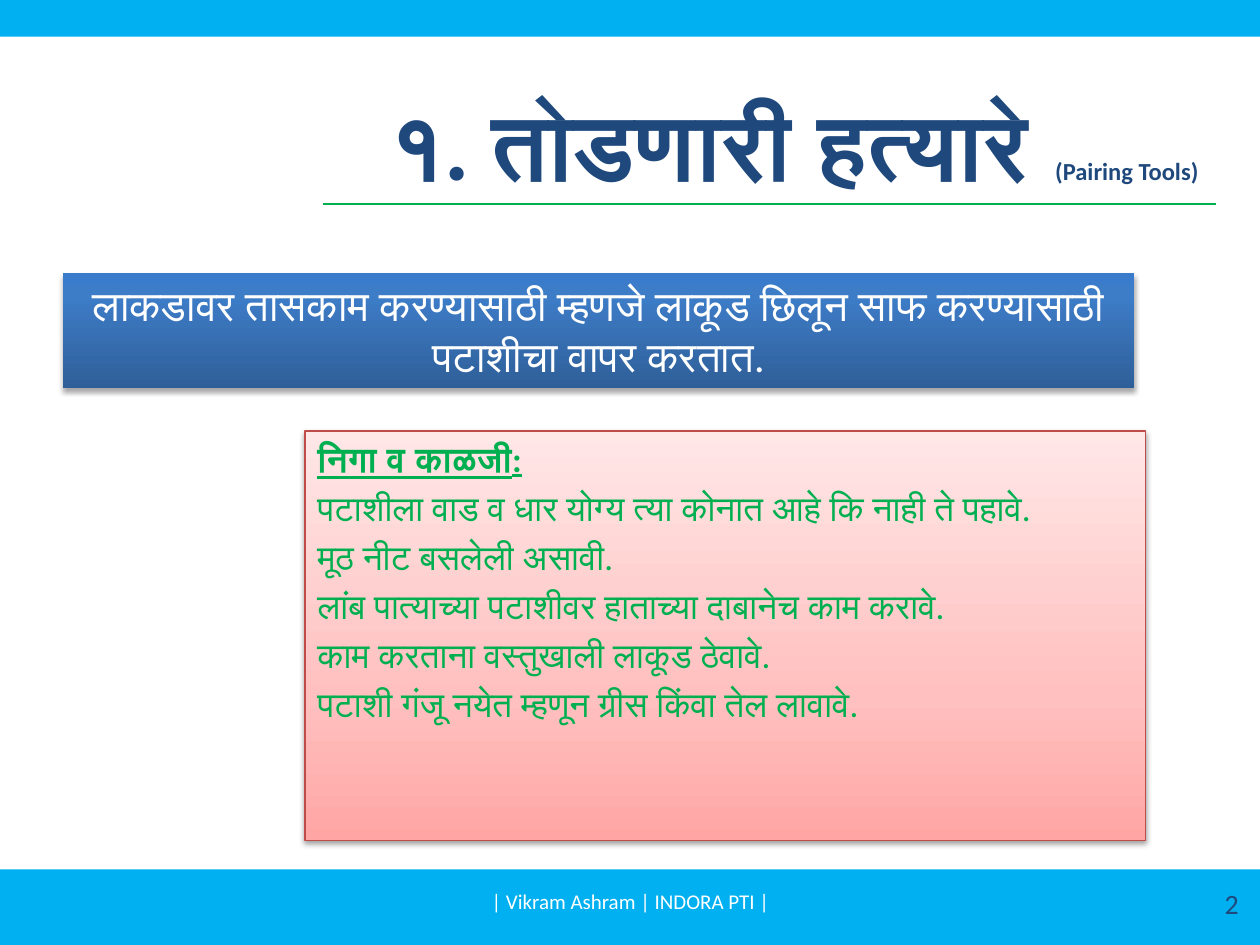
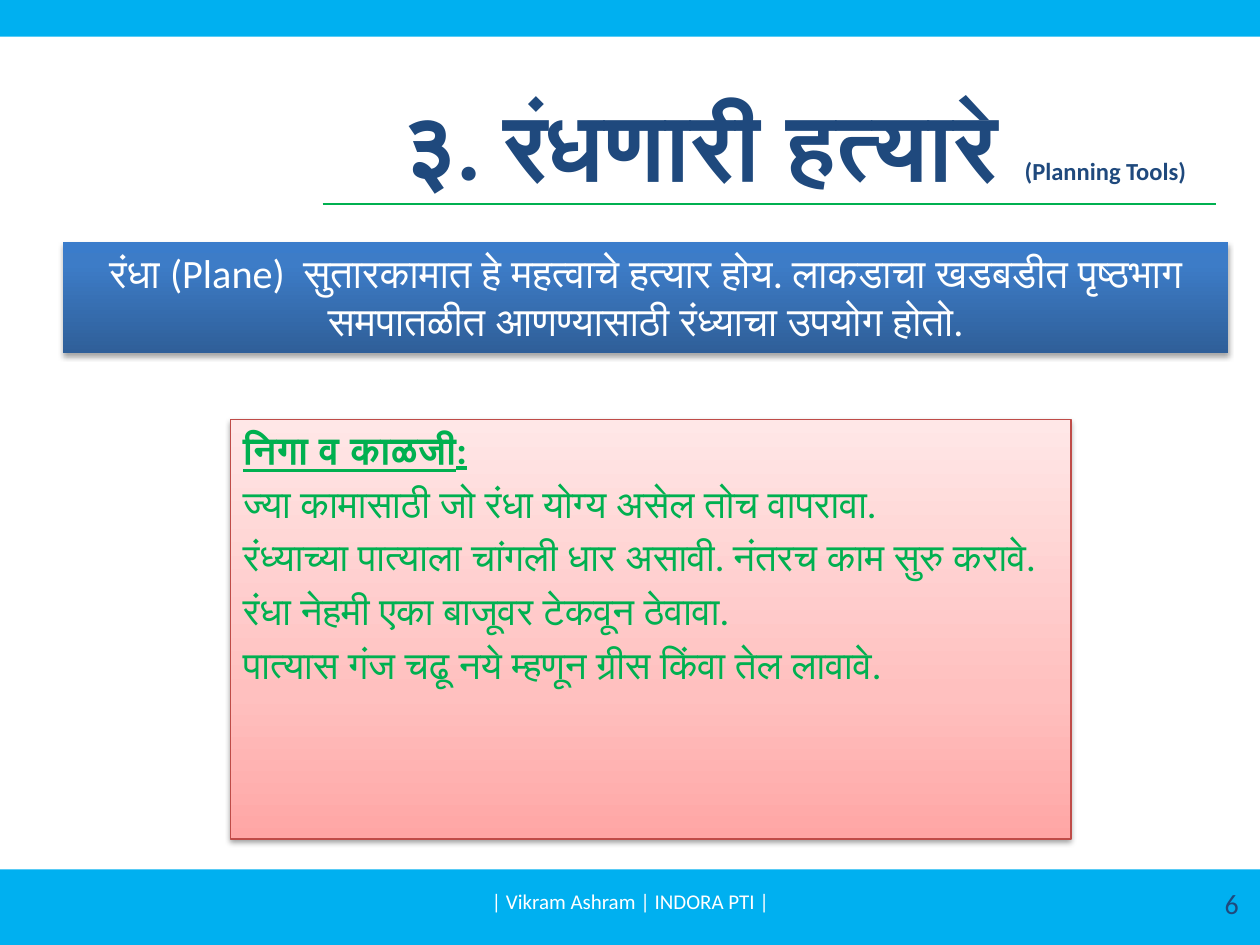
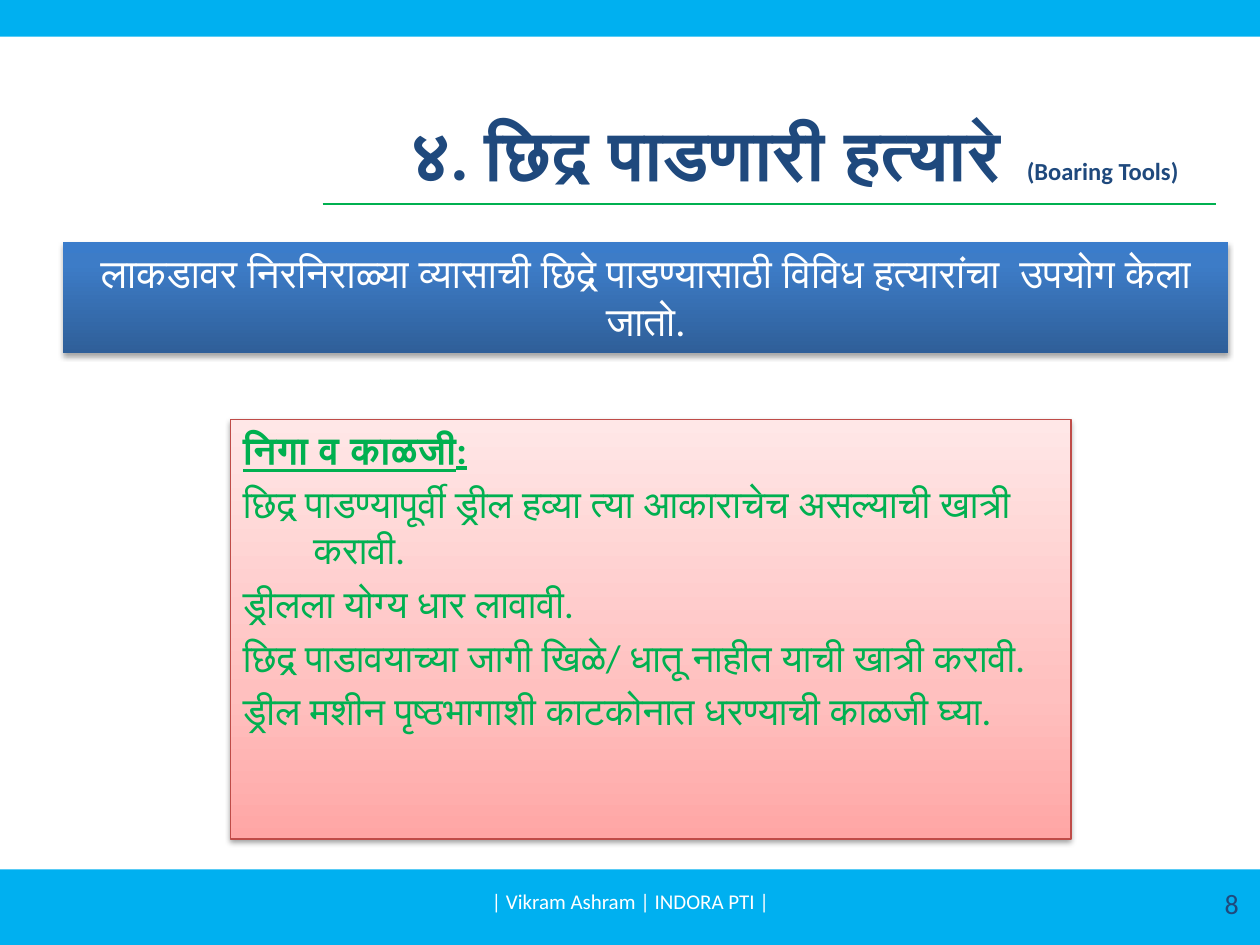
from lxml import etree
from pptx import Presentation
from pptx.dml.color import RGBColor
from pptx.enum import shapes, text
from pptx.oxml.ns import qn
from pptx.util import Inches, Pt

SKY = RGBColor(0x00, 0xB0, 0xF0)
GREEN = RGBColor(0x00, 0xB0, 0x50)
NAVY = RGBColor(0x1F, 0x49, 0x7D)
WHITE = RGBColor(0xFF, 0xFF, 0xFF)
RED = RGBColor(0xBF, 0x4C, 0x48)
BLACK = RGBColor(0x00, 0x00, 0x00)
BLUES = [(0, RGBColor(0x2F, 0x5F, 0x99)), (80, RGBColor(0x3D, 0x7C, 0xC7)),
         (100, RGBColor(0x3A, 0x7C, 0xCB))]
PINKS = [(0, RGBColor(0xFF, 0xA6, 0xA5)), (35, RGBColor(0xFF, 0xC0, 0xBF)),
         (100, RGBColor(0xFF, 0xE7, 0xE7))]
FONT = "Calibri"
FOOTER = "| Vikram Ashram | INDORA PTI |"
CARE_HEADING = "निगा व काळजी:"

LESSONS = [
    {"number": 2,
     "title": [("१. तोडणारी हत्यारे ", 54), ("(Pairing Tools)", 14)],
     "use": "लाकडावर तासकाम करण्यासाठी म्हणजे लाकूड छिलून साफ करण्यासाठी पटाशीचा वापर करतात.",
     "use_box": (0.5, 2.17, 8.5, 0.91), "use_size": 24,
     "care": ["पटाशीला वाड व धार योग्य त्या कोनात आहे कि नाही ते पहावे.",
              "मूठ नीट बसलेली असावी.",
              "लांब पात्याच्या पटाशीवर हाताच्या दाबानेच काम करावे.",
              "काम करताना वस्तुखाली लाकूड ठेवावे.",
              "पटाशी गंजू नयेत म्हणून ग्रीस किंवा तेल लावावे."],
     "care_box": (2.42, 3.42, 6.67, 3.25), "care_size": 20},
    {"number": 6,
     "title": [("३. रंधणारी हत्यारे ", 54), ("(Planning Tools)", 14)],
     "use": "रंधा (Plane)  सुतारकामात हे महत्वाचे हत्यार होय. लाकडाचा खडबडीत पृष्ठभाग "
            "समपातळीत आणण्यासाठी रंध्याचा उपयोग होतो.",
     "use_box": (0.5, 1.92, 9.25, 0.88), "use_size": 23,
     "care": ["ज्या कामासाठी जो रंधा योग्य असेल तोच वापरावा.",
              "रंध्याच्या पात्याला चांगली धार असावी. नंतरच काम सुरु करावे.",
              "रंधा नेहमी एका बाजूवर टेकवून ठेवावा.",
              "पात्यास गंज चढू नये म्हणून ग्रीस किंवा तेल लावावे."],
     "care_box": (1.83, 3.33, 6.67, 3.33), "care_size": 22},
    {"number": 8,
     "title": [("४. छिद्र पाडणारी हत्यारे", 40), (" ", 54), ("(Boaring Tools)", 14)],
     "use": "लाकडावर निरनिराळ्या व्यासाची छिद्रे पाडण्यासाठी विविध हत्यारांचा  उपयोग केला जातो.",
     "use_box": (0.5, 1.92, 9.25, 0.88), "use_size": 23,
     "care": ["छिद्र पाडण्यापूर्वी ड्रील हव्या त्या आकाराचेच असल्याची खात्री करावी.",
              "ड्रीलला योग्य धार लावावी.",
              "छिद्र पाडावयाच्या जागी खिळे/ धातू नाहीत याची खात्री करावी.",
              "ड्रील मशीन पृष्ठभागाशी काटकोनात धरण्याची काळजी घ्या."],
     "care_box": (1.83, 3.33, 6.67, 3.33), "care_size": 22},
]


class Deck:
    """Hold the shared style and the slide being built."""

    def __init__(self):
        self.prs = Presentation()
        self.prs.slide_width, self.prs.slide_height = Inches(10), Inches(7.5)
        self.slide = None

    def new_slide(self):
        """Start a slide with its bands and title rule."""
        self.slide = self.prs.slides.add_slide(self.prs.slide_layouts[6])
        self.band(6.9, 0.6)
        self.rule()
        self.band(0, 0.29)

    def rect(self, box):
        """Add a plain rectangle without line or shadow."""
        sp = self.slide.shapes.add_shape(shapes.MSO_SHAPE.RECTANGLE, *map(Inches, box))
        sp.shadow.inherit = False
        sp.line.fill.background()
        return sp

    def band(self, top, height):
        """Add a full-width band."""
        sp = self.rect((0, top, 10, height))
        sp.fill.solid()
        sp.fill.fore_color.rgb = SKY

    def rule(self):
        """Add the line under the title."""
        y = Inches(1.62)
        line = self.slide.shapes.add_connector(
            shapes.MSO_CONNECTOR.STRAIGHT, Inches(2.56), y, Inches(9.65), y)
        line.line.color.rgb = GREEN
        line.line.width = Pt(0.75)
        etree.SubElement(line._element.spPr, qn("a:effectLst"))

    def run(self, p, words, size, color, bold=False, underline=False):
        """Add one styled run."""
        r = p.add_run()
        r.text = words
        r.font.name, r.font.size = FONT, Pt(size)
        r.font.bold, r.font.underline = bold, underline
        r.font.color.rgb = color

    def label(self, box, runs, color, align=text.PP_ALIGN.CENTER, bold=False):
        """Add a one-line text box, centred vertically."""
        tf = self.slide.shapes.add_textbox(*map(Inches, box)).text_frame
        tf.word_wrap = True
        tf.vertical_anchor = text.MSO_ANCHOR.MIDDLE
        p = tf.paragraphs[0]
        p.alignment = align
        for words, size in runs:
            self.run(p, words, size, color, bold)

    def panel(self, box, stops, alpha, distance):
        """Add a rectangle with a vertical gradient and a soft shadow."""
        sp = self.rect(box)
        sp.fill.gradient()
        sp.fill.gradient_angle = 90
        spPr = sp._element.spPr
        gs_list = spPr.find(".//" + qn("a:gsLst"))
        for gs in list(gs_list):
            gs_list.remove(gs)
        for pos, color in stops:
            gs = etree.SubElement(gs_list, qn("a:gs"), pos=str(pos * 1000))
            etree.SubElement(gs, qn("a:srgbClr"), val=str(color))
        shadow = etree.SubElement(
            spPr.find(qn("a:effectLst")), qn("a:outerShdw"), blurRad=str(Pt(3.1)),
            dist=str(Pt(distance)), dir="5400000", rotWithShape="0")
        clr = etree.SubElement(shadow, qn("a:srgbClr"), val=str(BLACK))
        etree.SubElement(clr, qn("a:alpha"), val=str(alpha * 1000))
        sp.text_frame.word_wrap = True
        sp.text_frame.vertical_anchor = text.MSO_ANCHOR.TOP
        return sp

    def use_panel(self, box, words, size):
        """Add the blue panel that tells what the tool is for."""
        tf = self.panel(box, BLUES, 35, 1.8).text_frame
        tf.auto_size = text.MSO_AUTO_SIZE.SHAPE_TO_FIT_TEXT
        p = tf.paragraphs[0]
        p.alignment = text.PP_ALIGN.CENTER
        self.run(p, words, size, WHITE)

    def care_panel(self, box, items, size):
        """Add the pink panel with numbered care instructions."""
        sp = self.panel(box, PINKS, 38, 1.6)
        sp.line.color.rgb = RED
        sp.line.width = Pt(0.75)
        tf = sp.text_frame
        p = tf.paragraphs[0]
        p.alignment = text.PP_ALIGN.LEFT
        self.run(p, CARE_HEADING, size, GREEN, bold=True, underline=True)
        indent = Inches(0.56)
        for item in items:
            p = tf.add_paragraph()
            p.alignment = text.PP_ALIGN.LEFT
            p.space_before = Pt(size * 0.2)
            pPr = p._p.get_or_add_pPr()
            pPr.set("marL", str(indent))
            pPr.set("indent", str(-indent))
            etree.SubElement(pPr, qn("a:buAutoNum"), type="hindiNumPeriod")
            self.run(p, item, size, GREEN)

    def lesson(self, data):
        """Build one whole slide."""
        self.new_slide()
        self.label((2.33, 0.33, 7.95, 1.61), data["title"], NAVY, bold=True)
        self.care_panel(data["care_box"], data["care"], data["care_size"])
        self.label((7.6, 6.97, 2.33, 0.4), [(str(data["number"]), 16)], NAVY,
                   text.PP_ALIGN.RIGHT)
        self.label((3.42, 6.95, 3.17, 0.4), [(FOOTER, 12)], WHITE)
        self.use_panel(data["use_box"], data["use"], data["use_size"])


def main():
    """Build and save the deck."""
    deck = Deck()
    for data in LESSONS:
        deck.lesson(data)
    deck.prs.save("out.pptx")


if __name__ == "__main__":
    main()
